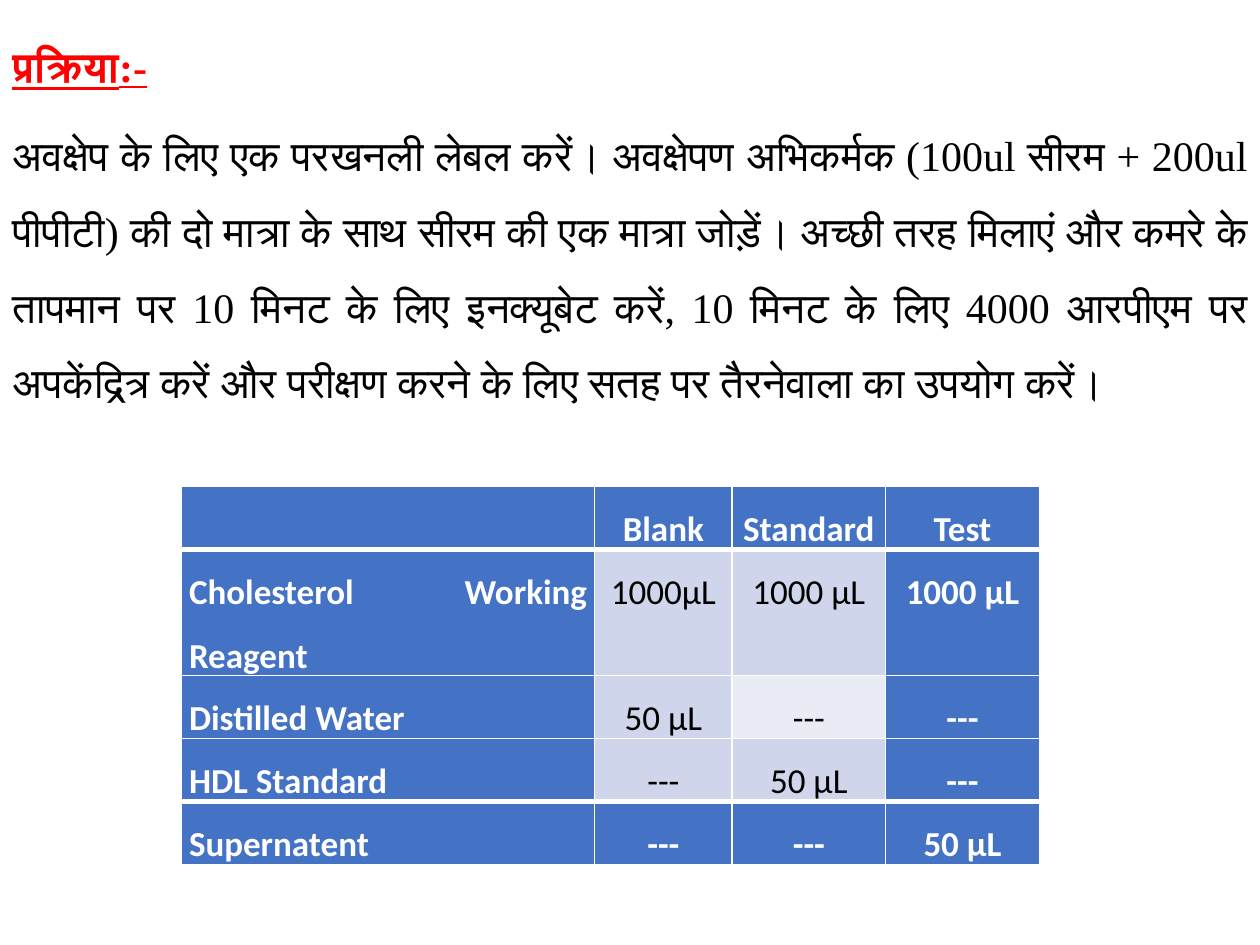
from lxml import etree
from pptx import Presentation
from pptx.dml.color import RGBColor
from pptx.enum.text import PP_ALIGN as AL
from pptx.oxml.ns import qn
from pptx.util import Inches, Pt

HEADING = "प्रक्रिया:-"
BODY = (
    "अवक्षेप के लिए एक परखनली लेबल करें। अवक्षेपण अभिकर्मक (100ul सीरम + 200ul पीपीटी) "
    "की दो मात्रा के साथ सीरम की एक मात्रा जोड़ें। अच्छी तरह मिलाएं और कमरे के तापमान पर "
    "10 मिनट के लिए इनक्यूबेट करें, 10 मिनट के लिए 4000 आरपीएम पर अपकेंद्रित्र करें और "
    "परीक्षण करने के लिए सतह पर तैरनेवाला का उपयोग करें।"
)
ROWS = [
    ["", "Blank", "Standard", "Test"],
    ["Cholesterol Working Reagent", "1000µL", "1000 µL", "1000 µL"],
    ["Distilled Water", "50 µL", "---", "---"],
    ["HDL Standard", "---", "50 µL", "---"],
    ["Supernatent", "---", "---", "50 µL"],
]
COL_WIDTHS = [3.28, 1.09, 1.22, 1.22]
ROW_HEIGHT = 0.43
BLUE, BAND, PALE = "4472C4", "CFD5EA", "E9EBF5"
WHITE, BLACK, RED = "FFFFFF", "000000", "FF0000"


def rgb(value):
    return RGBColor.from_string(value)


def style(p, align, font, size, color, bold, underline=False):
    p.alignment = align
    p.line_spacing = 1.5
    p.space_after = Pt(8)
    f = p.font
    f.name, f.size, f.bold, f.underline = font, Pt(size), bold, underline
    f.color.rgb = rgb(color)


def add_borders(cell, widths):
    tcPr = cell._tc.get_or_add_tcPr()
    for i, (side, width) in enumerate(widths.items()):
        ln = etree.Element(qn(f"a:ln{side}"), w=str(Pt(width)))
        fill = etree.SubElement(ln, qn("a:solidFill"))
        etree.SubElement(fill, qn("a:srgbClr"), val=WHITE)
        tcPr.insert(i, ln)


prs = Presentation()
prs.slide_width, prs.slide_height = Inches(10), Inches(7.5)
s = prs.slides.add_slide(prs.slide_layouts[6])

tf = s.shapes.add_textbox(Inches(0), Inches(0.07), Inches(10), Inches(3.78)).text_frame
tf.word_wrap = True
tf.text = f"{HEADING}\n{BODY}"
heading, body = tf.paragraphs
style(heading, AL.JUSTIFY, "Times New Roman", 24, RED, True, True)
style(body, AL.JUSTIFY, "Times New Roman", 24, BLACK, False)

last_row, last_col = len(ROWS) - 1, len(COL_WIDTHS) - 1
table = s.shapes.add_table(
    len(ROWS), len(COL_WIDTHS), Inches(1.44), Inches(3.86),
    Inches(sum(COL_WIDTHS)), Inches(ROW_HEIGHT * len(ROWS)),
).table
for column, width in zip(table.columns, COL_WIDTHS):
    column.width = Inches(width)

for r, row in enumerate(ROWS):
    table.rows[r].height = Inches(ROW_HEIGHT)
    for c, text in enumerate(row):
        cell = table.cell(r, c)
        cell.margin_left = cell.margin_right = Inches(0.06)
        cell.margin_top = cell.margin_bottom = 0
        edge = r in (0, last_row) or c in (0, last_col)
        cell.fill.solid()
        cell.fill.fore_color.rgb = rgb(
            BLUE if edge else PALE if (r, c) == (2, 2) else BAND)
        add_borders(cell, {
            "L": 1, "R": 1,
            "T": 3 if r in (1, last_row) else 1,
            "B": 3 if r in (0, last_row - 1) else 1,
        })
        cell.text = text
        style(cell.text_frame.paragraphs[0], AL.CENTER if c else AL.JUSTIFY,
              "Calibri", 20, WHITE if edge else BLACK, edge)

prs.save("out.pptx")
